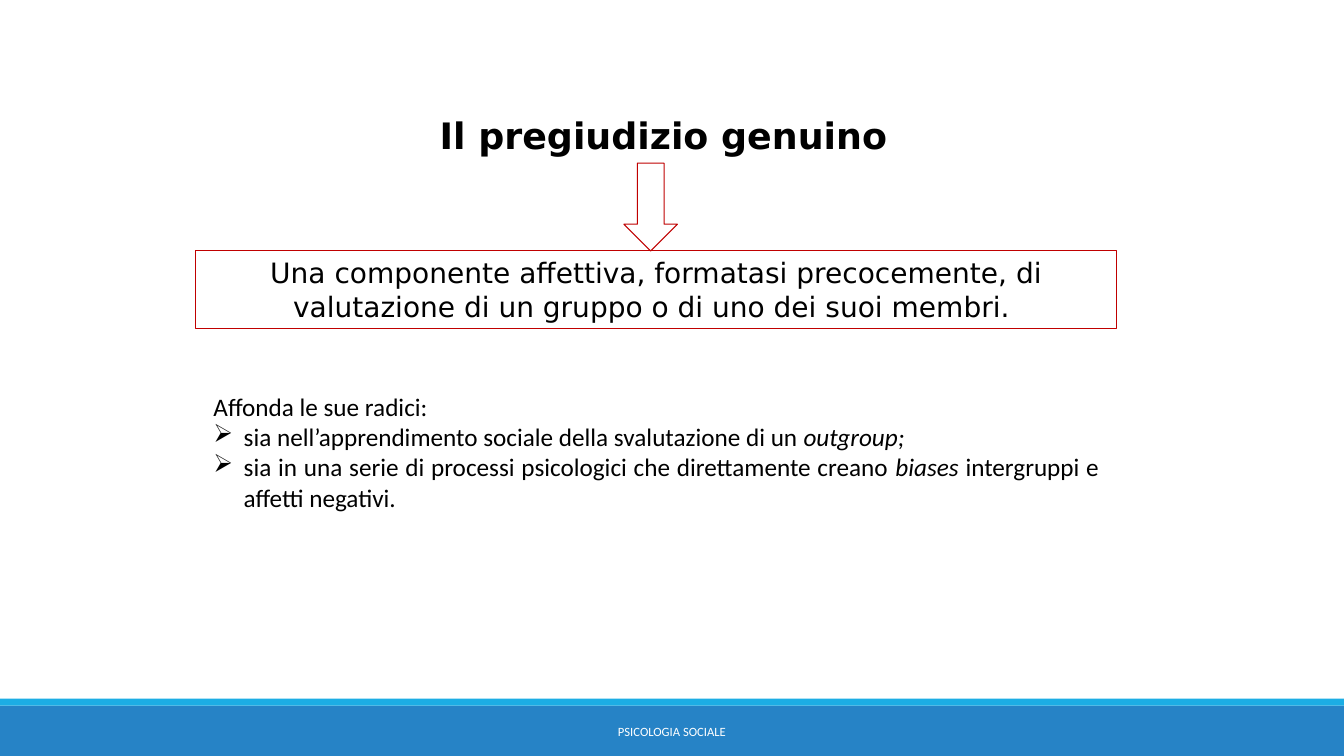
from dataclasses import dataclass
from typing import NamedTuple

from lxml import etree
from pptx import Presentation
from pptx.dml.color import RGBColor
from pptx.enum.shapes import MSO_SHAPE
from pptx.enum.text import MSO_ANCHOR, MSO_AUTO_SIZE, PP_ALIGN
from pptx.oxml.ns import qn
from pptx.util import Pt

RECT, DOWN_ARROW = MSO_SHAPE.RECTANGLE, MSO_SHAPE.DOWN_ARROW
TOP, MIDDLE = MSO_ANCHOR.TOP, MSO_ANCHOR.MIDDLE
CENTER, JUSTIFY = PP_ALIGN.CENTER, PP_ALIGN.JUSTIFY
GROW, FIXED = MSO_AUTO_SIZE.SHAPE_TO_FIT_TEXT, MSO_AUTO_SIZE.NONE


@dataclass(frozen=True)
class Theme:
    heading_font: str = "DejaVu Sans"
    body_font: str = "Calibri"
    title_size: float = 26
    definition_size: float = 20
    body_size: float = 18
    footer_size: float = 9
    line_width: float = 0.75
    bullet_indent: float = 21.6
    text: RGBColor = RGBColor(0x00, 0x00, 0x00)
    footer_text: RGBColor = RGBColor(0xFF, 0xFF, 0xFF)
    outline: RGBColor = RGBColor(0xC0, 0x00, 0x00)
    footer_bar: RGBColor = RGBColor(0x26, 0x83, 0xC6)
    footer_stripe: RGBColor = RGBColor(0x1C, 0xAD, 0xE4)


class Box(NamedTuple):
    left: float
    top: float
    width: float
    height: float


class Run(NamedTuple):
    text: str
    italic: bool = False


class Para(NamedTuple):
    runs: list[Run]
    bullet: str = ""


class Style(NamedTuple):
    font: str
    size: float
    color: RGBColor
    align: PP_ALIGN
    bold: bool = False


THEME = Theme()
SLIDE_WIDTH, SLIDE_HEIGHT = 960, 540

TITLE_STYLE = Style(THEME.heading_font, THEME.title_size, THEME.text, CENTER, True)
DEFINITION_STYLE = Style(THEME.heading_font, THEME.definition_size, THEME.text, CENTER)
BODY_STYLE = Style(THEME.body_font, THEME.body_size, THEME.text, JUSTIFY)
FOOTER_STYLE = Style(THEME.body_font, THEME.footer_size, THEME.footer_text, CENTER)

TITLE = [Para([Run("Il pregiudizio genuino")])]
DEFINITION = [Para([Run(
    "Una componente affettiva, formatasi precocemente, di valutazione "
    "di un gruppo o di uno dei suoi membri. ")])]
ROOTS = [
    Para([Run("Affonda le sue radici:")]),
    Para([Run("sia nell’apprendimento sociale della svalutazione di un "),
          Run("outgroup;", True)], "➢"),
    Para([Run("sia in una serie di processi psicologici che direttamente creano "),
          Run("biases ", True),
          Run("intergruppi e affetti negativi.")], "➢"),
]
FOOTER = [Para([Run("PSICOLOGIA SOCIALE")])]


def add_bullet(p, char: str) -> None:
    """Give the paragraph a hanging bullet."""
    p_pr = p._p.get_or_add_pPr()
    p_pr.set("marL", str(Pt(THEME.bullet_indent)))
    p_pr.set("indent", str(-Pt(THEME.bullet_indent)))
    etree.SubElement(p_pr, qn("a:buChar")).set("char", char)


def fill_text(tf, paras: list[Para], style: Style, anchor=TOP,
              wrap: bool = True, auto_size=GROW) -> None:
    tf.word_wrap = wrap
    tf.auto_size = auto_size
    tf.vertical_anchor = anchor
    for i, para in enumerate(paras):
        p = tf.add_paragraph() if i else tf.paragraphs[0]
        p.alignment = style.align
        if para.bullet:
            add_bullet(p, para.bullet)
        for run in para.runs:
            r = p.add_run()
            r.text = run.text
            r.font.name = style.font
            r.font.size = Pt(style.size)
            r.font.bold = style.bold
            r.font.italic = run.italic
            r.font.color.rgb = style.color


def add_text(s, box: Box, paras: list[Para], style: Style, **layout) -> None:
    sp = s.shapes.add_textbox(*map(Pt, box))
    fill_text(sp.text_frame, paras, style, **layout)


def add_bar(s, box: Box, color: RGBColor) -> None:
    sp = s.shapes.add_shape(RECT, *map(Pt, box))
    sp.shadow.inherit = False
    sp.fill.solid()
    sp.fill.fore_color.rgb = color
    sp.line.fill.background()


def add_outlined(s, kind: MSO_SHAPE, box: Box):
    sp = s.shapes.add_shape(kind, *map(Pt, box))
    sp.shadow.inherit = False
    sp.fill.background()
    sp.line.color.rgb = THEME.outline
    sp.line.width = Pt(THEME.line_width)
    return sp


def main() -> None:
    prs = Presentation()
    prs.slide_width, prs.slide_height = Pt(SLIDE_WIDTH), Pt(SLIDE_HEIGHT)
    s = prs.slides.add_slide(prs.slide_layouts[6])

    add_bar(s, Box(0, 504, SLIDE_WIDTH, 36), THEME.footer_bar)
    add_bar(s, Box(0, 499, SLIDE_WIDTH, 5), THEME.footer_stripe)

    add_text(s, Box(304.6, 77, 339.1, 38.9), TITLE, TITLE_STYLE, wrap=False)
    definition = add_outlined(s, RECT, Box(139.7, 179.3, 658.1, 55.4))
    fill_text(definition.text_frame, DEFINITION, DEFINITION_STYLE)
    add_text(s, Box(145.4, 275.8, 646.6, 94.3), ROOTS, BODY_STYLE)
    add_outlined(s, DOWN_ARROW, Box(445.7, 116.6, 38.2, 62.7))
    add_text(s, Box(290.2, 508.3, 379.4, 28.8), FOOTER, FOOTER_STYLE,
             anchor=MIDDLE, auto_size=FIXED)

    prs.save("out.pptx")


if __name__ == "__main__":
    main()
